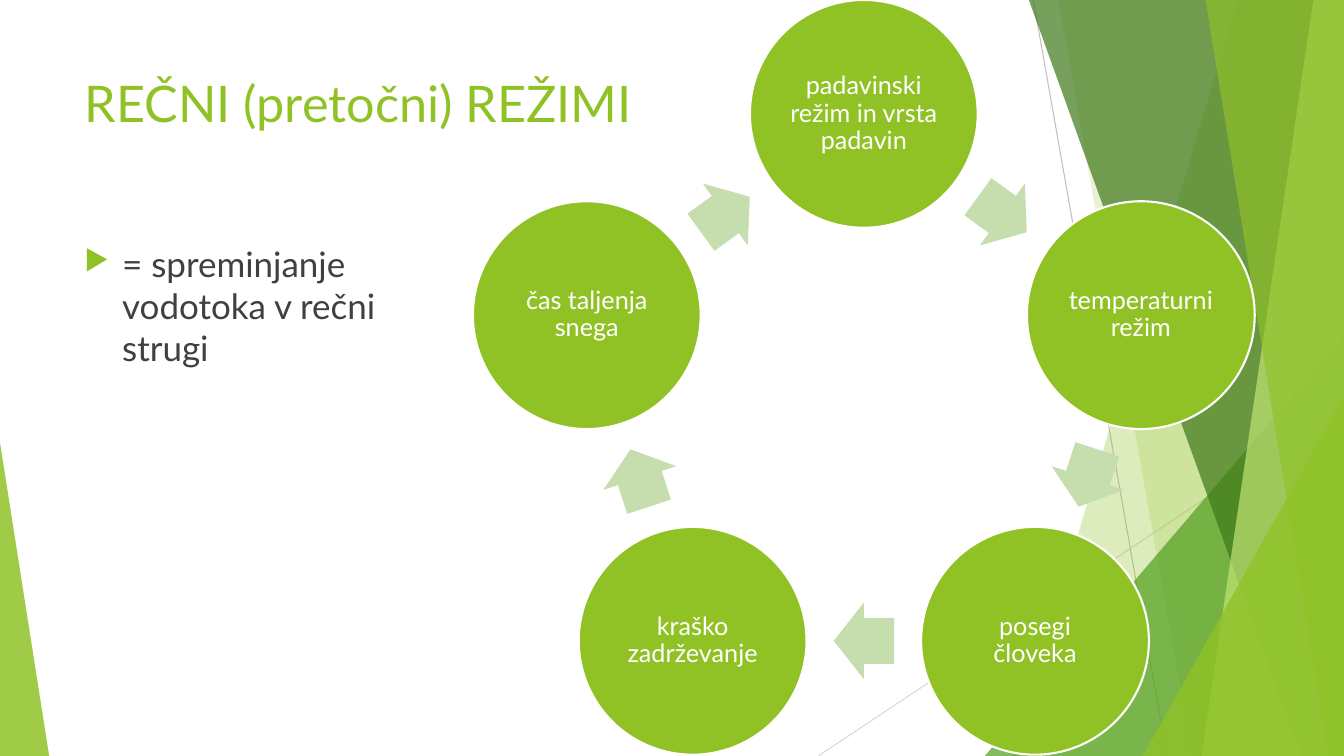
"""Build the slide on river discharge regimes with its five-step cycle."""
from math import cos, pi, sin

from lxml.etree import SubElement
from pptx import Presentation
from pptx.dml.color import RGBColor
from pptx.enum.shapes import MSO_CONNECTOR as CONN, MSO_SHAPE as SHAPE
from pptx.enum.text import MSO_ANCHOR as ANCHOR, PP_ALIGN as ALIGN
from pptx.oxml.ns import qn
from pptx.util import Cm, Pt

W, H = 33.87, 19.05
GREEN = "90C226"


def paint(s, color, alpha=100):
    s.shadow.inherit = False
    s.line.fill.background()
    s.fill.solid()
    s.fill.fore_color.rgb = RGBColor.from_string(color)
    if alpha < 100:
        clr = s.fill._xPr.find(qn("a:solidFill"))[0]
        SubElement(clr, qn("a:alpha"), val=str(alpha * 1000))


def write(p, text, size, color):
    r = p.add_run()
    r.text = text
    r.font.name = "Lato"
    r.font.size = Pt(size)
    r.font.color.rgb = RGBColor.from_string(color)


prs = Presentation()
prs.slide_width, prs.slide_height = Cm(W), Cm(H)
slide = prs.slides.add_slide(prs.slide_layouts[5])
shapes = slide.shapes

for x1, y1, x2, y2, color in [
    (26.04, 0, 29.41, H, "BFBFBF"),
    (W, 10.24, 20.62, H, "D9D9D9"),
]:
    line = shapes.add_connector(CONN.STRAIGHT, Cm(x1), Cm(y1), Cm(x2), Cm(y2))
    line.line.color.rgb = RGBColor.from_string(color)
    line.line.width = Pt(0.75)
    SubElement(line._element.spPr, qn("a:effectLst"))

facets = [
    ("band", 31.19, 25.5, GREEN, 30),
    ("band", 26.67, 30.05, GREEN, 20),
    ("triangle", 24.82, 8.46, "54A021", 72),
    ("band", 25.93, 32.79, "3F7819", 70),
    ("band", 33.1, 30.28, "C0E474", 70),
    ("band", 30.38, 33.48, GREEN, 65),
    ("triangle", 28.8, 9.98, GREEN, 80),
]
for kind, a, b, color, alpha in facets:
    if kind == "band":
        outline = shapes.build_freeform(Cm(a), 0)
        outline.add_line_segments([(Cm(W), 0), (Cm(W), Cm(H)), (Cm(b), Cm(H))])
        s = outline.convert_to_shape()
    else:
        s = shapes.add_shape(SHAPE.ISOSCELES_TRIANGLE, Cm(a), Cm(b), Cm(W - a), Cm(H - b))
        s.adjustments[0] = 1
    paint(s, color, alpha)

wedge = shapes.add_shape(SHAPE.ISOSCELES_TRIANGLE, 0, Cm(11.15), Cm(1.24), Cm(7.9))
wedge.adjustments[0] = 0
paint(wedge, GREEN, 85)

title = shapes.title
title.left, title.top, title.width, title.height = Cm(1.88), Cm(1.7), Cm(23.88), Cm(3.66)
tf = title.text_frame
tf.vertical_anchor = ANCHOR.TOP
tf.paragraphs[0].alignment = ALIGN.LEFT
write(tf.paragraphs[0], "REČNI (pretočni) REŽIMI", 36, GREEN)

tf = shapes.add_textbox(Cm(1.88), Cm(5.99), Cm(9.53), Cm(10.77)).text_frame
tf.word_wrap = True
p = tf.paragraphs[0]
p.space_before = Pt(10)
write(p, "= spreminjanje vodotoka v rečni strugi", 25, "404040")
pPr = p._p.get_or_add_pPr()
pPr.set("marL", str(Cm(0.95)))
pPr.set("indent", str(-Cm(0.95)))
SubElement(SubElement(pPr, qn("a:buClr")), qn("a:srgbClr"), val=GREEN)
SubElement(pPr, qn("a:buSzPct"), val="80000")
SubElement(pPr, qn("a:buChar"), char="▶")

factors = [
    "padavinski režim in vrsta padavin",
    "temperaturni režim",
    "posegi človeka",
    "kraško zadrževanje",
    "čas taljenja snega",
]
cx, cy, radius = 21.77, 10.21, 7.34
size, arrow_w, arrow_h = 5.74, 1.52, 1.93
step = 2 * pi / len(factors)
arrow_radius = radius * cos(step / 2)

for i, factor in enumerate(factors):
    x, y = cx + radius * sin(i * step), cy - radius * cos(i * step)
    s = shapes.add_shape(SHAPE.OVAL, Cm(x - size / 2), Cm(y - size / 2), Cm(size), Cm(size))
    paint(s, GREEN)
    s.line.color.rgb = RGBColor.from_string("FFFFFF")
    s.line.width = Pt(1.5)
    tf = s.text_frame
    tf.word_wrap = True
    tf.vertical_anchor = ANCHOR.MIDDLE
    tf.margin_left = tf.margin_right = tf.margin_top = tf.margin_bottom = Cm(0.08)
    p = tf.paragraphs[0]
    p.alignment = ALIGN.CENTER
    p.line_spacing = 0.9
    write(p, factor, 18, "FFFFFF")

    turn = (i + 0.5) * step
    x, y = cx + arrow_radius * sin(turn), cy - arrow_radius * cos(turn)
    arrow = shapes.add_shape(SHAPE.RIGHT_ARROW, Cm(x - arrow_w / 2), Cm(y - arrow_h / 2),
                             Cm(arrow_w), Cm(arrow_h))
    arrow.adjustments[0], arrow.adjustments[1] = 0.6, 0.5
    arrow.rotation = 36 + 72 * i
    paint(arrow, "C6DDAD")

prs.save("out.pptx")
